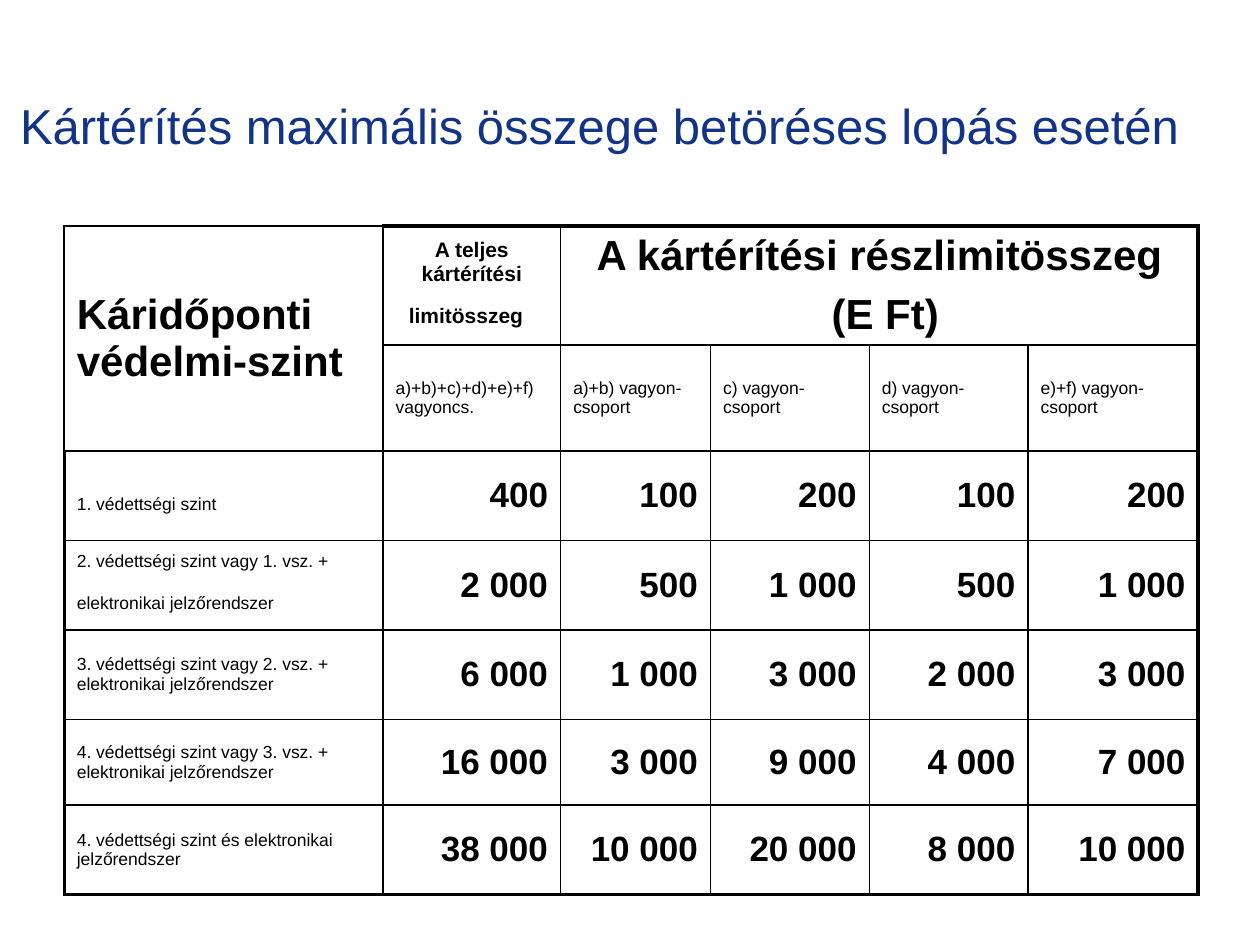
from dataclasses import dataclass

from lxml import etree
from pptx import Presentation
from pptx import util as u
from pptx.dml.color import RGBColor
from pptx.enum import text
from pptx.oxml import ns


@dataclass(frozen=True)
class Theme:
    """Colours, type sizes and line widths of the slide."""
    font: str = "Arial"
    title_colour: str = "113388"
    ink: str = "000000"
    title: int = 28
    heading: int = 24
    amount: int = 20
    subheading: int = 12
    label: int = 10
    thin: float = 1
    thick: float = 2.25
    space_after: float = 0.3


THEME = Theme()
WIDTH, HEIGHT = 10, 7.5
COLUMNS = [2.53, 1.41, 1.19, 1.26, 1.26, 1.35]
ROWS = [0.94, 0.84, 0.71, 0.71, 0.71, 0.68, 0.71]
LEFT, CENTER, RIGHT = text.PP_ALIGN.LEFT, text.PP_ALIGN.CENTER, text.PP_ALIGN.RIGHT

GROUPS = ["a)+b)+c)+d)+e)+f) vagyoncs.", "a)+b) vagyon-csoport",
          "c) vagyon-csoport", "d) vagyon-csoport", "e)+f) vagyon-csoport"]
LEVELS = [
    ("1. védettségi szint", True, ["400", "100", "200", "100", "200"]),
    ("2. védettségi szint vagy 1. vsz. + elektronikai jelzőrendszer", True,
     ["2 000", "500", "1 000", "500", "1 000"]),
    ("3. védettségi szint vagy 2. vsz. + elektronikai jelzőrendszer", False,
     ["6 000", "1 000", "3 000", "2 000", "3 000"]),
    ("4. védettségi szint vagy 3. vsz. + elektronikai jelzőrendszer", False,
     ["16 000", "3 000", "9 000", "4 000", "7 000"]),
    ("4. védettségi szint és elektronikai jelzőrendszer", False,
     ["38 000", "10 000", "20 000", "8 000", "10 000"]),
]


def style_run(run, size, bold=False, colour=THEME.ink):
    """Format one run of text."""
    run.font.name = THEME.font
    run.font.size = u.Pt(size)
    run.font.bold = bold
    run.font.color.rgb = RGBColor.from_string(colour)


def add_title(slide, wording):
    """Place and format the title placeholder."""
    title = slide.shapes.title
    title.left, title.top = u.Inches(0.016 * WIDTH), u.Inches(0.101 * HEIGHT)
    title.width, title.height = u.Inches(0.957 * WIDTH), u.Inches(0.1 * HEIGHT)
    frame = title.text_frame
    frame.text = wording
    frame.auto_size = text.MSO_AUTO_SIZE.NONE
    frame.vertical_anchor = text.MSO_ANCHOR.TOP
    frame.margin_left = frame.margin_right = frame.margin_top = frame.margin_bottom = 0
    frame.paragraphs[0].alignment = LEFT
    style_run(frame.paragraphs[0].runs[0], THEME.title, colour=THEME.title_colour)


def add_grid(slide):
    """Add the empty table with its merged header cells."""
    table = slide.shapes.add_table(
        len(ROWS), len(COLUMNS), u.Inches(0.051 * WIDTH), u.Inches(0.239 * HEIGHT),
        u.Inches(sum(COLUMNS)), u.Inches(sum(ROWS))).table
    table.first_row = table.horz_banding = False
    for column, width in zip(table.columns, COLUMNS):
        column.width = u.Inches(width)
    for row, height in zip(table.rows, ROWS):
        row.height = u.Inches(height)
    table.cell(0, 0).merge(table.cell(1, 0))
    table.cell(0, 2).merge(table.cell(0, len(COLUMNS) - 1))
    return table


def fill_cell(cell, wording, size, bold=False, alignment=LEFT, tall_end=False):
    """Write a cell, optionally ending in a heading-sized space."""
    frame = cell.text_frame
    frame.text = wording
    cell.vertical_anchor = text.MSO_ANCHOR.MIDDLE
    for paragraph in frame.paragraphs:
        paragraph.alignment = alignment
        paragraph.space_after = u.Pt(THEME.space_after * size)
        style_run(paragraph.runs[0], size, bold)
    if tall_end:
        ending = frame.paragraphs[-1].add_run()
        ending.text = " "
        style_run(ending, THEME.heading)


def set_border(cell, side, width):
    """Draw one border of a cell."""
    line = etree.SubElement(cell._tc.get_or_add_tcPr(), ns.qn(f"a:ln{side}"),
                            w=str(u.Pt(width)))
    fill = etree.SubElement(line, ns.qn("a:solidFill"))
    etree.SubElement(fill, ns.qn("a:srgbClr"), val=THEME.ink)


def draw_borders(table):
    """Give the table thin inner lines and a thick frame beside its corner cell."""
    for row in range(len(ROWS)):
        for column in range(len(COLUMNS)):
            cell = table.cell(row, column)
            if cell.is_spanned:
                continue
            thick_sides = {
                "L": column == 0 and row > 0,
                "R": column + cell.span_width == len(COLUMNS),
                "T": row == 0 and column > 0,
                "B": row + cell.span_height == len(ROWS),
            }
            for side, thick in thick_sides.items():
                set_border(cell, side, THEME.thick if thick else THEME.thin)
            cell.fill.background()


def fill_header(table):
    """Write the two header rows."""
    fill_cell(table.cell(0, 0), "Káridőponti védelmi-szint", THEME.heading, bold=True)
    fill_cell(table.cell(0, 1), "A teljes kártérítési limitösszeg", THEME.subheading,
              bold=True, alignment=CENTER, tall_end=True)
    fill_cell(table.cell(0, 2), "A kártérítési részlimitösszeg\n (E Ft)", THEME.heading,
              bold=True, alignment=CENTER)
    for column, group in enumerate(GROUPS, 1):
        fill_cell(table.cell(1, column), group, THEME.label)


def fill_levels(table):
    """Write one row of limits for each protection level."""
    for row, (level, tall_end, amounts) in enumerate(LEVELS, 2):
        fill_cell(table.cell(row, 0), level, THEME.label, tall_end=tall_end)
        for column, amount in enumerate(amounts, 1):
            fill_cell(table.cell(row, column), amount, THEME.amount,
                      bold=True, alignment=RIGHT)


def main():
    """Build and save the slide."""
    presentation = Presentation()
    presentation.slide_width, presentation.slide_height = u.Inches(WIDTH), u.Inches(HEIGHT)
    slide = presentation.slides.add_slide(presentation.slide_layouts[5])
    add_title(slide, "Kártérítés maximális összege betöréses lopás esetén")
    table = add_grid(slide)
    fill_header(table)
    fill_levels(table)
    draw_borders(table)
    presentation.save("out.pptx")


if __name__ == "__main__":
    main()
